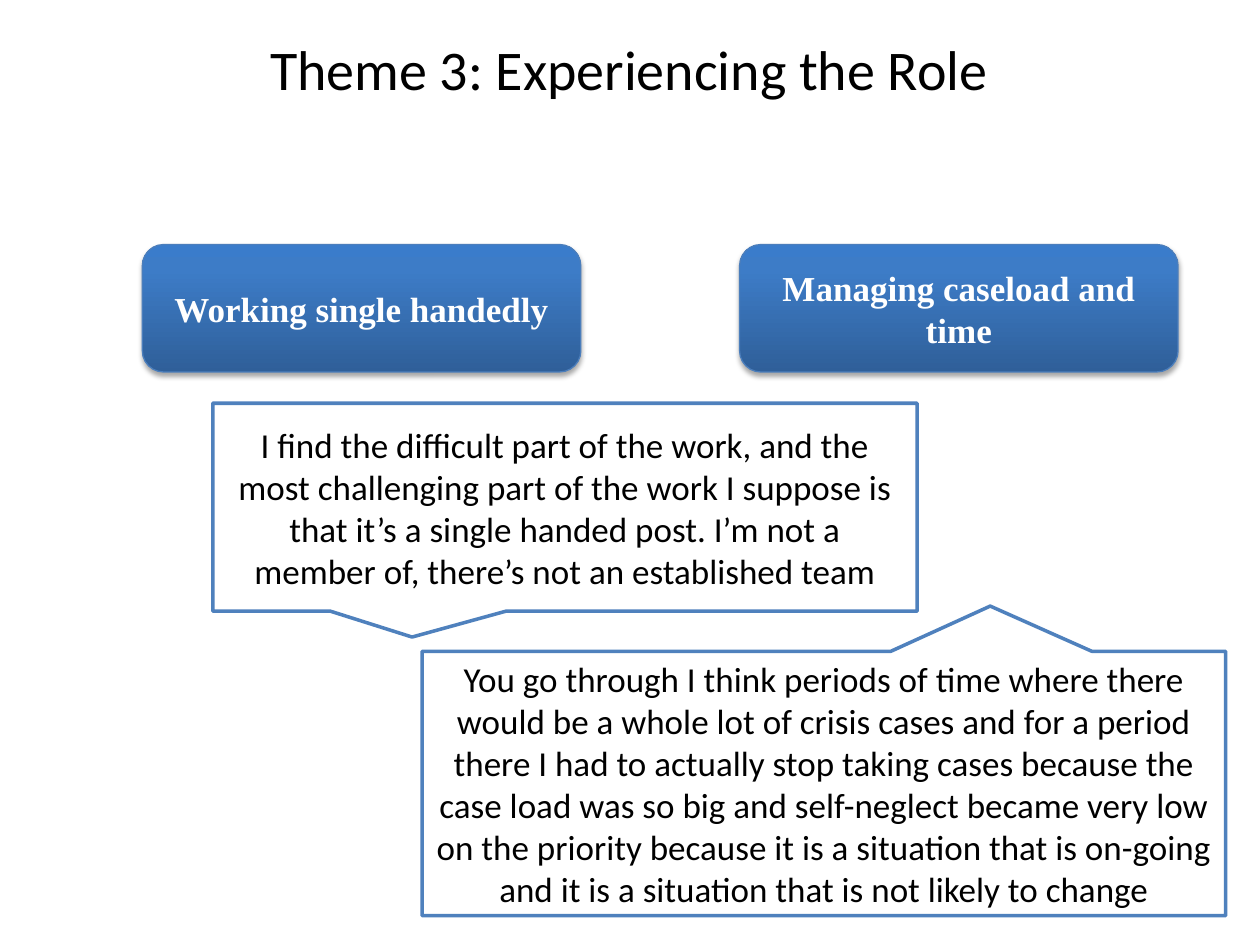
from lxml import etree
from pptx import Presentation
from pptx.dml.color import RGBColor
from pptx.enum import shapes, text
from pptx.oxml import parse_xml
from pptx.oxml.ns import nsdecls, qn
from pptx.util import Cm, Pt

BLACK = RGBColor(0x00, 0x00, 0x00)
WHITE = RGBColor(0xFF, 0xFF, 0xFF)
THEME_EDGE = RGBColor(0x4B, 0x7E, 0xBC)
QUOTE_EDGE = RGBColor(0x4F, 0x81, 0xBD)
GRADIENT = [
    (0, RGBColor(0x2F, 0x5F, 0x99)),
    (80, RGBColor(0x3D, 0x7C, 0xC7)),
    (100, RGBColor(0x3A, 0x7C, 0xCB)),
]

TITLE_FONT = {"name": "Calibri", "size": Pt(32)}
THEME_FONT = {"name": "Times New Roman", "size": Pt(20), "bold": True}
QUOTE_FONT = {"name": "Calibri", "size": Pt(20)}


def write(sp, words, font, color, anchor=text.MSO_ANCHOR.MIDDLE):
    """Put centred, formatted text into a shape."""
    tf = sp.text_frame
    tf.word_wrap = True
    tf.vertical_anchor = anchor
    p = tf.paragraphs[0]
    p.alignment = text.PP_ALIGN.CENTER
    r = p.add_run()
    r.text = words
    for name, value in font.items():
        setattr(r.font, name, value)
    r.font.color.rgb = color


def add_gradient_and_shadow(sp):
    sp.fill.gradient()
    sp.fill.gradient_angle = 90
    stops = sp._element.spPr.find(qn("a:gradFill")).find(qn("a:gsLst"))
    for stop in list(stops):
        stops.remove(stop)
    for percent, color in GRADIENT:
        stop = etree.SubElement(stops, qn("a:gs"), pos=str(percent * 1000))
        etree.SubElement(stop, qn("a:srgbClr"), val=str(color))
    effects = sp._element.spPr.find(qn("a:effectLst"))
    effects.append(parse_xml(
        f'<a:outerShdw {nsdecls("a")} blurRad="{Pt(3.1)}" dist="{Pt(1.8)}" '
        'dir="5400000" rotWithShape="0"><a:srgbClr val="000000">'
        '<a:alpha val="35000"/></a:srgbClr></a:outerShdw>'))


prs = Presentation()
prs.slide_width, prs.slide_height = Cm(25.4), Cm(19.05)
s = prs.slides.add_slide(prs.slide_layouts[5])

title = s.shapes.title
title.left, title.top, title.width, title.height = Cm(1.47), Cm(0.56), Cm(22.43), Cm(3.18)
write(title, "Theme 3: Experiencing the Role", TITLE_FONT, BLACK, text.MSO_ANCHOR.TOP)

themes = [(2.87, "Working single handedly"), (14.91, "Managing caseload and time")]
for left, words in themes:
    sp = s.shapes.add_shape(shapes.MSO_SHAPE.ROUNDED_RECTANGLE,
                            Cm(left), Cm(4.93), Cm(8.84), Cm(2.57))
    sp.shadow.inherit = False
    add_gradient_and_shadow(sp)
    sp.line.color.rgb = THEME_EDGE
    sp.line.width = Pt(0.75)
    write(sp, words, THEME_FONT, WHITE)

quotes = [
    ((4.29, 8.13, 14.2, 4.19), (-0.217, 0.625),
     "I find the difficult part of the work, and the most challenging part of the "
     "work I suppose is that it’s a single handed post. I’m not a member of, "
     "there’s not an established team"),
    ((8.51, 13.13, 16.2, 5.33), (0.207, -0.671),
     "You go through I think periods of time where there would be a whole lot of "
     "crisis cases and for a period there I had to actually stop taking cases because "
     "the case load was so big and self-neglect became very low on the priority "
     "because it is a situation that is on-going and it is a situation that is not "
     "likely to change"),
]
for box, pointer, words in quotes:
    sp = s.shapes.add_shape(shapes.MSO_SHAPE.RECTANGULAR_CALLOUT, *map(Cm, box))
    sp.shadow.inherit = False
    for i, offset in enumerate(pointer):
        sp.adjustments[i] = offset
    sp.fill.solid()
    sp.fill.fore_color.rgb = WHITE
    sp.line.color.rgb = QUOTE_EDGE
    sp.line.width = Pt(2)
    write(sp, words, QUOTE_FONT, BLACK)

prs.save("out.pptx")
